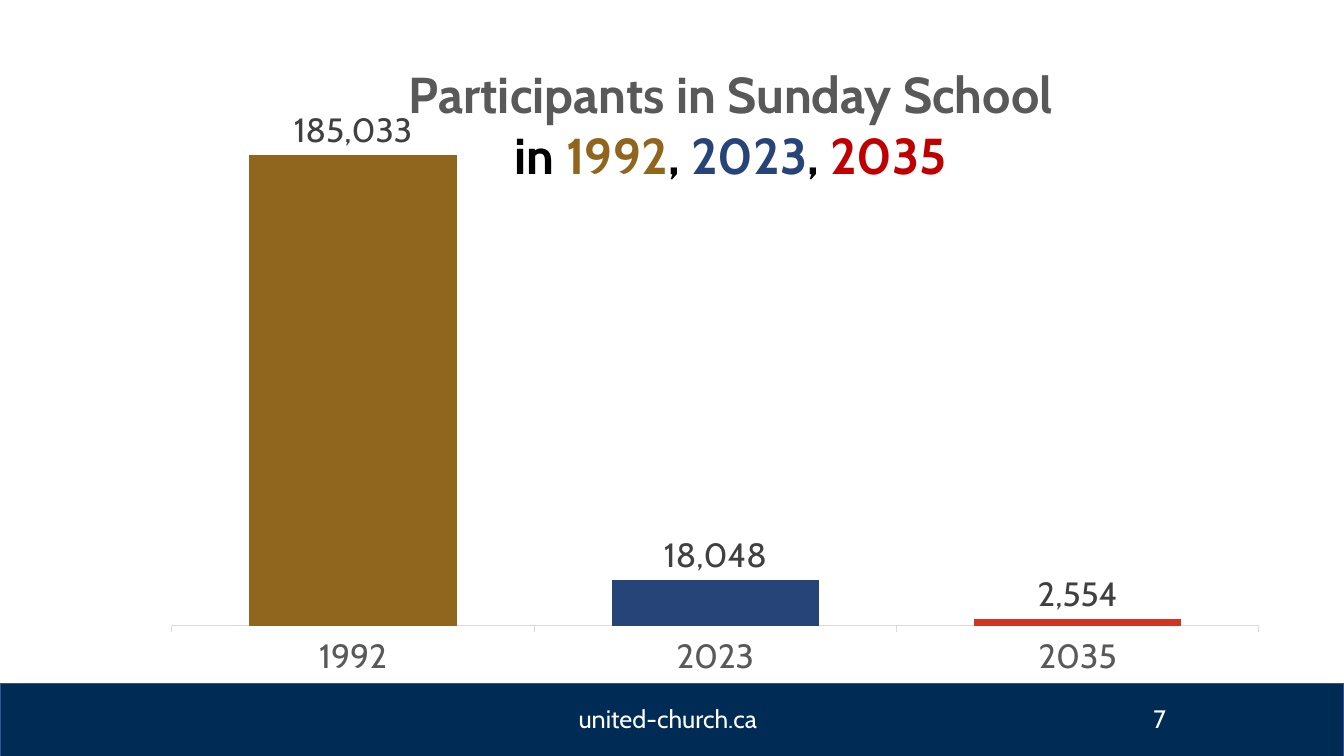
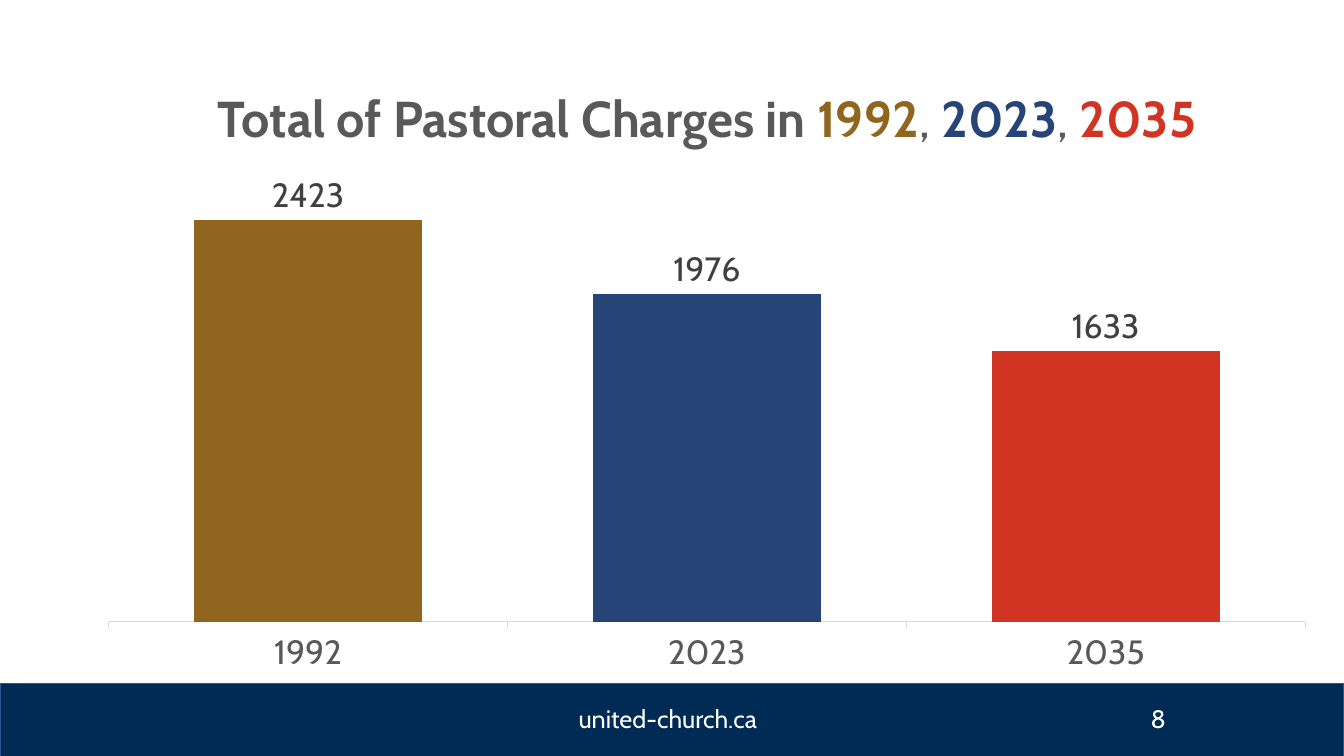
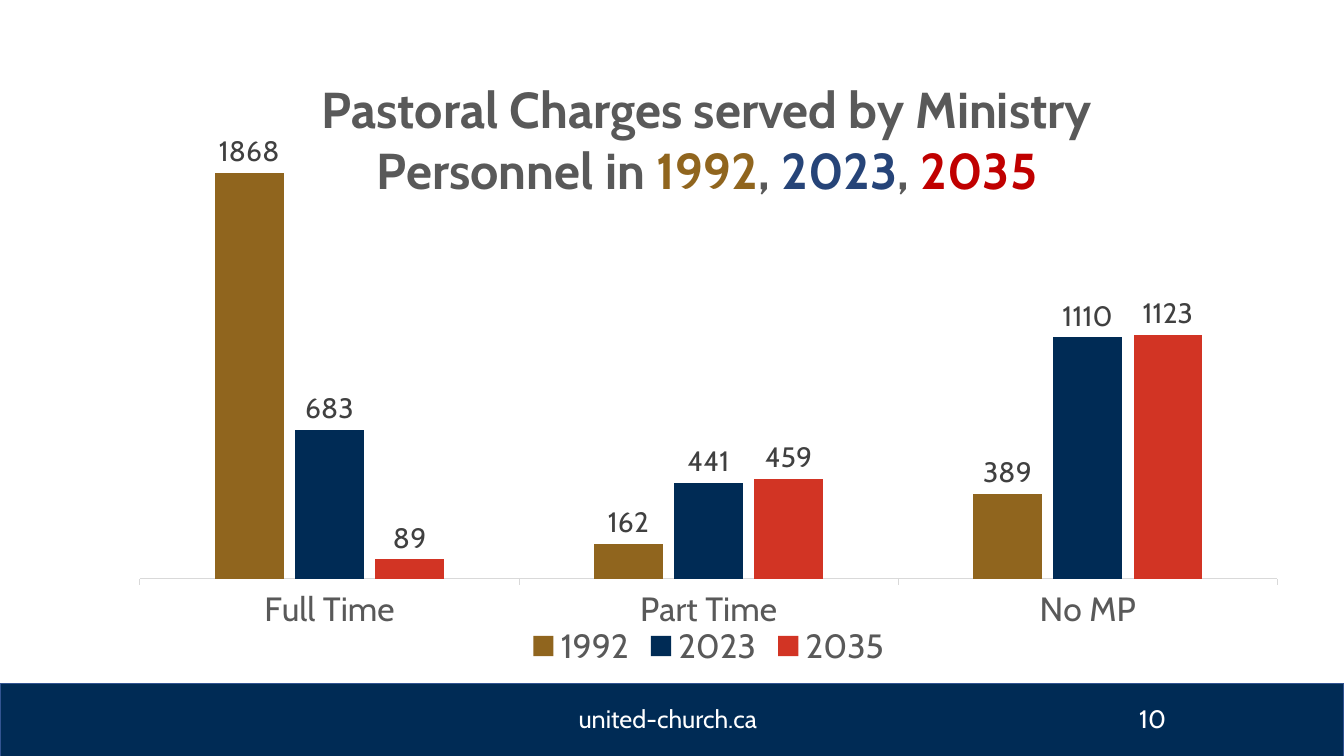
"""Build three column-chart slides comparing 1992, 2023 and 2035."""
from dataclasses import dataclass

import lxml.etree
import pptx
import pptx.chart.chart
import pptx.chart.data
import pptx.dml.color
import pptx.dml.fill
import pptx.enum.chart
import pptx.enum.shapes
import pptx.enum.text
import pptx.oxml
import pptx.oxml.ns
import pptx.presentation
import pptx.slide
import pptx.text.text
import pptx.util

Pt = pptx.util.Pt
FONT = "Cabin"
COLORS = {
    "white": "FFFFFF",
    "black": "000000",
    "navy": "002B55",
    "band_line": "325491",
    "gold": "90651E",
    "blue": "264478",
    "red": "D23424",
    "dark_red": "C00000",
    "gray": "595959",
    "label": "404040",
    "axis": "D9D9D9",
}
YEARS = ("1992", "2023", "2035")


@dataclass(frozen=True)
class Box:
    left: float
    top: float
    width: float
    height: float


@dataclass(frozen=True)
class TextRun:
    text: str
    color: str
    bold: bool = True


@dataclass(frozen=True)
class ChartSlide:
    number: int
    title_box: Box
    title_lines: tuple[tuple[TextRun, ...], ...]
    chart_box: Box
    plot_box: Box
    categories: tuple[str, ...]
    series: dict[str, tuple[int, ...]]
    colors: tuple[str, ...]
    maximum: int
    gap: int = 75
    overlap: int = -25
    label_size: int = 24
    number_format: str = "General"
    legend: bool = False


def year_runs(last_color: str, comma: TextRun) -> tuple[TextRun, ...]:
    """Return the three coloured years with commas between them."""
    first, second, third = YEARS
    return (TextRun(first, "gold"), comma, TextRun(second, "blue"), comma, TextRun(third, last_color))


SLIDES = (
    ChartSlide(
        number=7,
        title_box=Box(222, 45.3, 600, 92),
        title_lines=(
            (TextRun("Participants in Sunday School", "gray"),),
            (TextRun("in ", "black"), *year_runs("dark_red", TextRun(", ", "black"))),
        ),
        chart_box=Box(122.4, 29.5, 805, 459.4),
        plot_box=Box(0, 0.117, 0.965, 0.792),
        categories=YEARS,
        series={"Series 1": (185033, 18048, 2554)},
        colors=("gold", "blue", "red"),
        maximum=200000,
        number_format="#,##0",
    ),
    ChartSlide(
        number=8,
        title_box=Box(105, 62.4, 800, 48),
        title_lines=(
            (
                TextRun("Total of Pastoral Charges in ", "gray"),
                *year_runs("red", TextRun(", ", "gray", bold=False)),
            ),
        ),
        chart_box=Box(62.6, 46.8, 885.6, 448.6),
        plot_box=Box(0.017, 0.094, 0.965, 0.792),
        categories=YEARS,
        series={"Series 1": (2423, 1976, 1633)},
        colors=("gold", "blue", "red"),
        maximum=3000,
    ),
    ChartSlide(
        number=10,
        title_box=Box(185, 56, 640, 92),
        title_lines=(
            (
                TextRun("Pastoral Charges served by Ministry Personnel in ", "gray"),
                *year_runs("dark_red", TextRun(", ", "gray")),
            ),
        ),
        chart_box=Box(85.7, 40.3, 841, 440.6),
        plot_box=Box(0.017, 0.142, 0.966, 0.705),
        categories=("Full Time", "Part Time", "No MP"),
        series=dict(zip(YEARS, ((1868, 162, 389), (683, 441, 1110), (89, 459, 1123)))),
        colors=("gold", "navy", "red"),
        maximum=2000,
        gap=219,
        overlap=-17,
        label_size=20,
        legend=True,
    ),
)


def place(box: Box) -> tuple[int, int, int, int]:
    """Return the box as lengths in points."""
    return Pt(box.left), Pt(box.top), Pt(box.width), Pt(box.height)


def rgb(name: str) -> pptx.dml.color.RGBColor:
    """Look up a named colour."""
    return pptx.dml.color.RGBColor.from_string(COLORS[name])


def paint(fill: pptx.dml.fill.FillFormat, color: str) -> None:
    """Set a solid fill."""
    fill.solid()
    fill.fore_color.rgb = rgb(color)


def style_font(font: pptx.text.text.Font, size: float, color: str, bold: bool = False) -> None:
    """Set typeface, size, colour and weight."""
    font.name = FONT
    font.size = Pt(size)
    font.bold = bold
    font.color.rgb = rgb(color)


def add_run(paragraph: pptx.text.text._Paragraph, text_run: TextRun, size: float) -> None:
    """Append one styled run."""
    run = paragraph.add_run()
    run.text = text_run.text
    style_font(run.font, size, text_run.color, text_run.bold)


def set_title(slide: pptx.slide.Slide, content: ChartSlide) -> None:
    """Place and fill the title placeholder."""
    title = slide.shapes.title
    title.left, title.top, title.width, title.height = place(content.title_box)
    frame = title.text_frame
    frame.word_wrap = True
    frame.auto_size = pptx.enum.text.MSO_AUTO_SIZE.NONE
    frame.vertical_anchor = pptx.enum.text.MSO_ANCHOR.TOP
    frame.margin_left = frame.margin_right = frame.margin_top = frame.margin_bottom = Pt(0)
    for index, line in enumerate(content.title_lines):
        paragraph = frame.add_paragraph() if index else frame.paragraphs[0]
        paragraph.alignment = pptx.enum.text.PP_ALIGN.CENTER
        paragraph.line_spacing = 1.0
        paragraph.space_before = Pt(0)
        for text_run in line:
            add_run(paragraph, text_run, 36)


def add_footer(slide: pptx.slide.Slide, number: int) -> None:
    """Draw the navy band with the site address and slide number."""
    band = slide.shapes.add_shape(
        pptx.enum.shapes.MSO_SHAPE.RECTANGLE, *place(Box(0, 488.2, 960, 54))
    )
    band.shadow.inherit = False
    paint(band.fill, "navy")
    band.line.color.rgb = rgb("band_line")
    band.line.width = Pt(1)
    alignments = pptx.enum.text.PP_ALIGN
    for text, left, width, alignment in (
        ("united-church.ca", 318, 318, alignments.CENTER),
        (str(number), 678, 162, alignments.RIGHT),
    ):
        text_box = slide.shapes.add_textbox(*place(Box(left, 499, width, 29)))
        text_box.text_frame.word_wrap = True
        paragraph = text_box.text_frame.paragraphs[0]
        paragraph.alignment = alignment
        add_run(paragraph, TextRun(text, "white", bold=False), 18)


def set_chart_layout(chart: pptx.chart.chart.Chart, plot_box: Box) -> None:
    """Fix the inner plot area and make the chart background clear."""
    qualify = pptx.oxml.ns.qn
    declarations = pptx.oxml.ns.nsdecls("c", "a")
    chart_element = chart.element.find(qualify("c:chart"))
    chart_element.addnext(
        pptx.oxml.parse_xml(f"<c:spPr {declarations}><a:noFill/><a:ln><a:noFill/></a:ln></c:spPr>")
    )
    plot_area = chart_element.find(qualify("c:plotArea"))
    for old_layout in plot_area.findall(qualify("c:layout")):
        plot_area.remove(old_layout)
    layout = lxml.etree.Element(qualify("c:layout"))
    manual = lxml.etree.SubElement(layout, qualify("c:manualLayout"))
    for tag, value in (
        ("layoutTarget", "inner"),
        ("xMode", "edge"),
        ("yMode", "edge"),
        ("x", plot_box.left),
        ("y", plot_box.top),
        ("w", plot_box.width),
        ("h", plot_box.height),
    ):
        lxml.etree.SubElement(manual, qualify(f"c:{tag}")).set("val", str(value))
    plot_area.insert(0, layout)


def add_column_chart(slide: pptx.slide.Slide, content: ChartSlide) -> None:
    """Add the clustered column chart."""
    data = pptx.chart.data.CategoryChartData(number_format=content.number_format)
    data.categories = content.categories
    for name, values in content.series.items():
        data.add_series(name, values)
    chart = slide.shapes.add_chart(
        pptx.enum.chart.XL_CHART_TYPE.COLUMN_CLUSTERED, *place(content.chart_box), data
    ).chart
    chart.has_title = False
    style_font(chart.font, 10, "black")
    set_chart_layout(chart, content.plot_box)

    chart.has_legend = content.legend
    if content.legend:
        chart.legend.position = pptx.enum.chart.XL_LEGEND_POSITION.BOTTOM
        chart.legend.include_in_layout = False
        style_font(chart.legend.font, 24, "gray")

    value_axis = chart.value_axis
    value_axis.visible = False
    value_axis.has_major_gridlines = False
    value_axis.minimum_scale = 0
    value_axis.maximum_scale = content.maximum
    category_axis = chart.category_axis
    category_axis.major_tick_mark = pptx.enum.chart.XL_TICK_MARK.OUTSIDE
    category_axis.format.line.color.rgb = rgb("axis")
    category_axis.format.line.width = Pt(0.75)
    style_font(category_axis.tick_labels.font, 24, "gray")

    plot = chart.plots[0]
    plot.vary_by_categories = False
    plot.gap_width = content.gap
    plot.overlap = content.overlap
    for series, color in zip(plot.series, content.colors):
        series.invert_if_negative = False
        paint(series.format.fill, color)
        labels = series.data_labels
        labels.show_value = True
        labels.position = pptx.enum.chart.XL_LABEL_POSITION.OUTSIDE_END
        labels.number_format = content.number_format
        labels.number_format_is_linked = False
        style_font(labels.font, content.label_size, "label")
    if len(content.series) == 1:
        for index, color in enumerate(content.colors):
            paint(plot.series[0].points[index].format.fill, color)


def add_chart_slide(presentation: pptx.presentation.Presentation, content: ChartSlide) -> None:
    """Build one slide with footer, title and chart."""
    slide = presentation.slides.add_slide(presentation.slide_layouts[5])
    paint(slide.background.fill, "white")
    add_footer(slide, content.number)
    set_title(slide, content)
    add_column_chart(slide, content)


def main() -> None:
    """Create and save the presentation."""
    presentation = pptx.Presentation()
    presentation.slide_width = Pt(960)
    presentation.slide_height = Pt(540)
    for content in SLIDES:
        add_chart_slide(presentation, content)
    presentation.save("out.pptx")


if __name__ == "__main__":
    main()
